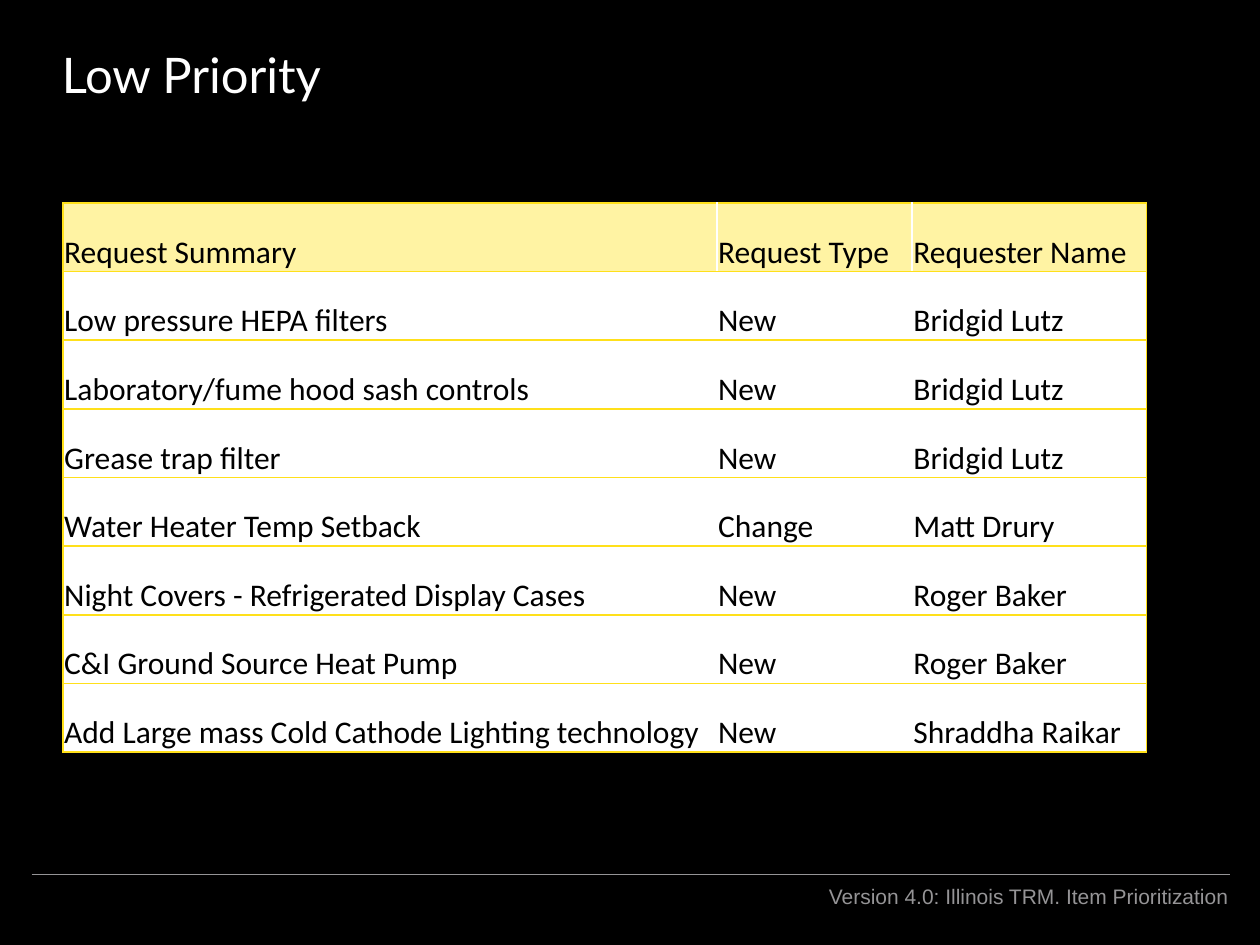
from dataclasses import dataclass

from lxml import etree
from pptx import Presentation
from pptx import util as u
from pptx.dml.color import RGBColor
from pptx.enum import shapes, text
from pptx.oxml import ns


@dataclass
class Theme:
    background: str = "000000"
    title: str = "FFFFFF"
    footer: str = "959496"
    ink: str = "000000"
    header_fill: str = "FFF3A3"
    row_fill: str = "FFFFFF"
    border: str = "FFE01A"
    title_size: int = 28
    table_size: int = 18
    footer_size: int = 12


def write(tf, content, font, size, color, align=text.PP_ALIGN.LEFT, anchor=text.MSO_ANCHOR.TOP):
    tf.word_wrap = True
    tf.vertical_anchor = anchor
    p = tf.paragraphs[0]
    p.alignment = align
    r = p.add_run()
    r.text = content
    r.font.name = font
    r.font.size = u.Pt(size)
    r.font.bold = False
    r.font.color.rgb = RGBColor.from_string(color)


def add_borders(cell, sides, color):
    tc_pr = cell._tc.get_or_add_tcPr()
    for i, side in enumerate(sides):
        ln = etree.Element(ns.qn(f"a:ln{side}"), w=str(u.Pt(1)))
        fill = etree.SubElement(ln, ns.qn("a:solidFill"))
        etree.SubElement(fill, ns.qn("a:srgbClr"), val=color)
        tc_pr.insert(i, ln)


theme = Theme()
prs = Presentation()
prs.slide_width, prs.slide_height = u.Inches(10), u.Inches(7.5)
s = prs.slides.add_slide(prs.slide_layouts[5])
s.background.fill.solid()
s.background.fill.fore_color.rgb = RGBColor.from_string(theme.background)

rule = s.shapes.add_connector(
    shapes.MSO_CONNECTOR.STRAIGHT, u.Inches(0.25), u.Inches(6.94), u.Inches(9.76), u.Inches(6.94))
rule.line.color.rgb = RGBColor.from_string(theme.footer)
rule.line.width = u.Pt(0.75)
etree.SubElement(rule._element.spPr, ns.qn("a:effectLst"))

title = s.shapes.title
title.left, title.top = u.Inches(0.39), u.Inches(0.3)
title.width, title.height = u.Inches(9), u.Inches(1.07)
write(title.text_frame, "Low Priority", "Lato", theme.title_size, theme.title)

footer = s.shapes.add_textbox(u.Inches(4.54), u.Inches(6.96), u.Inches(5.31), u.Inches(0.5))
write(footer.text_frame, "Version 4.0: Illinois TRM. Item Prioritization", "Arial",
      theme.footer_size, theme.footer, align=text.PP_ALIGN.RIGHT)

requests = [
    ("Request Summary", "Request Type", "Requester Name"),
    ("Low pressure HEPA filters", "New", "Bridgid Lutz"),
    ("Laboratory/fume hood sash controls", "New", "Bridgid Lutz"),
    ("Grease trap filter", "New", "Bridgid Lutz"),
    ("Water Heater Temp Setback", "Change", "Matt Drury"),
    ("Night Covers - Refrigerated Display Cases", "New", "Roger Baker"),
    ("C&I Ground Source Heat Pump", "New", "Roger Baker"),
    ("Add Large mass Cold Cathode Lighting technology", "New", "Shraddha Raikar"),
]
column_widths = (5.19, 1.55, 1.86)
column_borders = ("LTB", "TB", "RTB")
table = s.shapes.add_table(
    len(requests), len(column_widths), u.Inches(0.5), u.Inches(1.61),
    u.Inches(sum(column_widths)), u.Inches(4.36)).table
table.horz_banding = False
for column, width in zip(table.columns, column_widths):
    column.width = u.Inches(width)
for i, request in enumerate(requests):
    for j, content in enumerate(request):
        cell = table.cell(i, j)
        cell.margin_left = cell.margin_top = cell.margin_right = u.Inches(0.01)
        cell.margin_bottom = 0
        cell.vertical_anchor = text.MSO_ANCHOR.BOTTOM
        cell.fill.solid()
        cell.fill.fore_color.rgb = RGBColor.from_string(theme.row_fill if i else theme.header_fill)
        write(cell.text_frame, content, "Calibri", theme.table_size, theme.ink,
              anchor=text.MSO_ANCHOR.BOTTOM)
        add_borders(cell, column_borders[j], theme.border)

prs.save("out.pptx")
